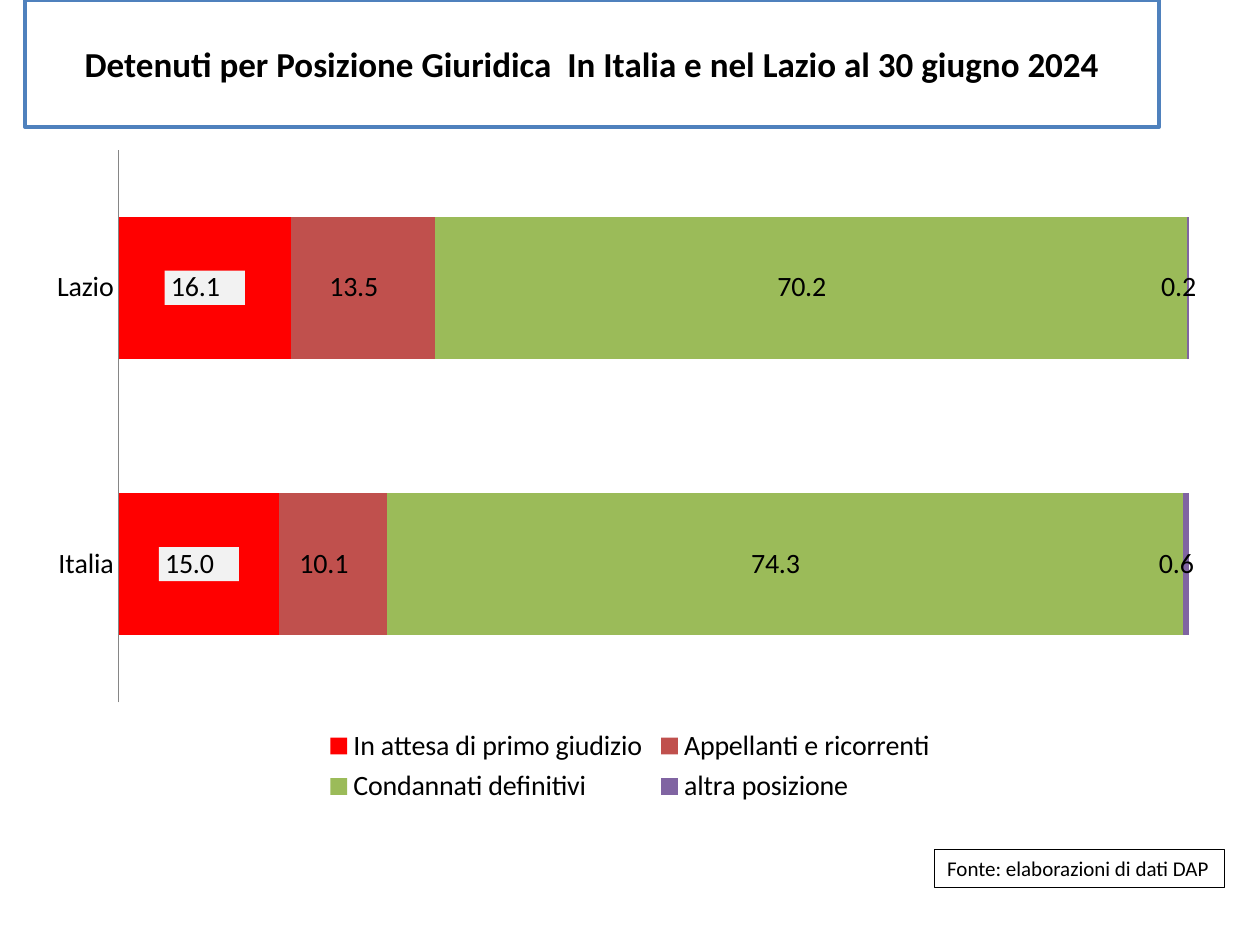
import pptx
import pptx.chart.data
import pptx.dml.color
import pptx.enum.chart
import pptx.enum.shapes
import pptx.enum.text
import pptx.oxml
import pptx.oxml.ns
import pptx.util

Pt = pptx.util.Pt
RGBColor = pptx.dml.color.RGBColor

BLACK = RGBColor(0x00, 0x00, 0x00)
WHITE = RGBColor(0xFF, 0xFF, 0xFF)
TITLE_BORDER = RGBColor(0x4F, 0x81, 0xBD)
AXIS_GREY = RGBColor(0x86, 0x86, 0x86)
LABEL_GREY = RGBColor(0xF2, 0xF2, 0xF2)
RED = RGBColor(0xFF, 0x00, 0x00)
BRICK = RGBColor(0xC0, 0x50, 0x4D)
GREEN = RGBColor(0x9B, 0xBB, 0x59)
PURPLE = RGBColor(0x80, 0x64, 0xA2)

FONT = "Calibri"
NUMBER_FORMAT = r"_-* #,##0.0\ _€_-;\-* #,##0.0\ _€_-;_-* "
REGIONS = ("Lazio", "Italia")
POSITIONS = (
    ("In attesa di primo giudizio", (16.1, 15.0), RED),
    ("Appellanti e ricorrenti", (13.5, 10.1), BRICK),
    ("Condannati definitivi", (70.2, 74.3), GREEN),
    ("altra posizione", (0.2, 0.6), PURPLE),
)


def set_font(font, size, bold=False):
    font.name = FONT
    font.size = Pt(size)
    font.bold = bold
    font.color.rgb = BLACK


def add_framed_text(slide, text, box, border, border_width, size, align, bold=False, wrap=True):
    frame = slide.shapes.add_shape(
        pptx.enum.shapes.MSO_SHAPE.RECTANGLE, *(Pt(length) for length in box))
    frame.shadow.inherit = False
    frame.fill.solid()
    frame.fill.fore_color.rgb = WHITE
    frame.line.color.rgb = border
    frame.line.width = Pt(border_width)
    frame.text_frame.word_wrap = wrap
    frame.text_frame.vertical_anchor = pptx.enum.text.MSO_ANCHOR.MIDDLE
    paragraph = frame.text_frame.paragraphs[0]
    paragraph.text = text
    paragraph.alignment = align
    set_font(paragraph.font, size, bold)


def manual_layout(x, y, width, height, inner=False):
    target = '<c:layoutTarget val="inner"/>' if inner else ""
    return pptx.oxml.parse_xml(
        f'<c:layout {pptx.oxml.ns.nsdecls("c")}><c:manualLayout>{target}'
        '<c:xMode val="edge"/><c:yMode val="edge"/>'
        f'<c:x val="{x}"/><c:y val="{y}"/><c:w val="{width}"/><c:h val="{height}"/>'
        '</c:manualLayout></c:layout>')


def fill_labels(labels, color):
    fill = pptx.oxml.parse_xml(
        f'<c:spPr {pptx.oxml.ns.nsdecls("c", "a")}><a:solidFill>'
        f'<a:srgbClr val="{color}"/></a:solidFill></c:spPr>')
    labels._element.find(pptx.oxml.ns.qn("c:numFmt")).addnext(fill)


def style_series(series, color):
    series.format.fill.solid()
    series.format.fill.fore_color.rgb = color
    labels = series.data_labels
    labels.show_value = True
    labels.number_format = NUMBER_FORMAT
    labels.number_format_is_linked = False
    set_font(labels.font, 16)


def style_axes(chart):
    regions = chart.category_axis
    regions.reverse_order = True
    regions.major_tick_mark = pptx.enum.chart.XL_TICK_MARK.NONE
    regions.format.line.color.rgb = AXIS_GREY
    regions.format.line.width = Pt(0.75)
    chart.value_axis.visible = False
    chart.value_axis.has_major_gridlines = False


def add_legend(chart):
    chart.has_legend = True
    legend = chart.legend
    legend.position = pptx.enum.chart.XL_LEGEND_POSITION.BOTTOM
    legend.include_in_layout = False
    set_font(legend.font, 16)
    position = legend._element.find(pptx.oxml.ns.qn("c:legendPos"))
    position.addnext(manual_layout(0.24, 0.87, 0.52, 0.13))


def add_detainee_chart(slide, box):
    data = pptx.chart.data.CategoryChartData()
    data.categories = REGIONS
    for name, shares, _ in POSITIONS:
        data.add_series(name, shares)
    chart = slide.shapes.add_chart(
        pptx.enum.chart.XL_CHART_TYPE.BAR_STACKED_100,
        *(Pt(length) for length in box), data).chart
    chart.has_title = False
    set_font(chart.font, 16)
    plot = chart.plots[0]
    plot.gap_width = 95
    plot.overlap = 100
    plot.vary_by_categories = False
    for series, (_, _, color) in zip(plot.series, POSITIONS):
        style_series(series, color)
    fill_labels(plot.series[0].data_labels, LABEL_GREY)
    style_axes(chart)
    add_legend(chart)
    plot_area = chart._chartSpace.chart.plotArea
    for layout in plot_area.findall(pptx.oxml.ns.qn("c:layout")):
        plot_area.remove(layout)
    plot_area.insert(0, manual_layout(0.07, 0.02, 0.9, 0.82, inner=True))


def main():
    """Build the slide on detainees by legal position and save it."""
    deck = pptx.Presentation()
    deck.slide_width, deck.slide_height = Pt(720), Pt(540)
    slide = deck.slides.add_slide(deck.slide_layouts[6])
    align = pptx.enum.text.PP_ALIGN
    add_framed_text(
        slide, "Detenuti per Posizione Giuridica  In Italia e nel Lazio al 30 giugno 2024",
        (14.4, 0, 648, 72.7), TITLE_BORDER, 2, 20, align.CENTER, bold=True)
    add_framed_text(
        slide, "Fonte: elaborazioni di dati DAP",
        (534.2, 485.3, 165.6, 21.8), BLACK, 0.75, 12, align.LEFT, wrap=False)
    add_detainee_chart(slide, (20.2, 77.8, 679.7, 385.2))
    deck.save("out.pptx")


if __name__ == "__main__":
    main()
